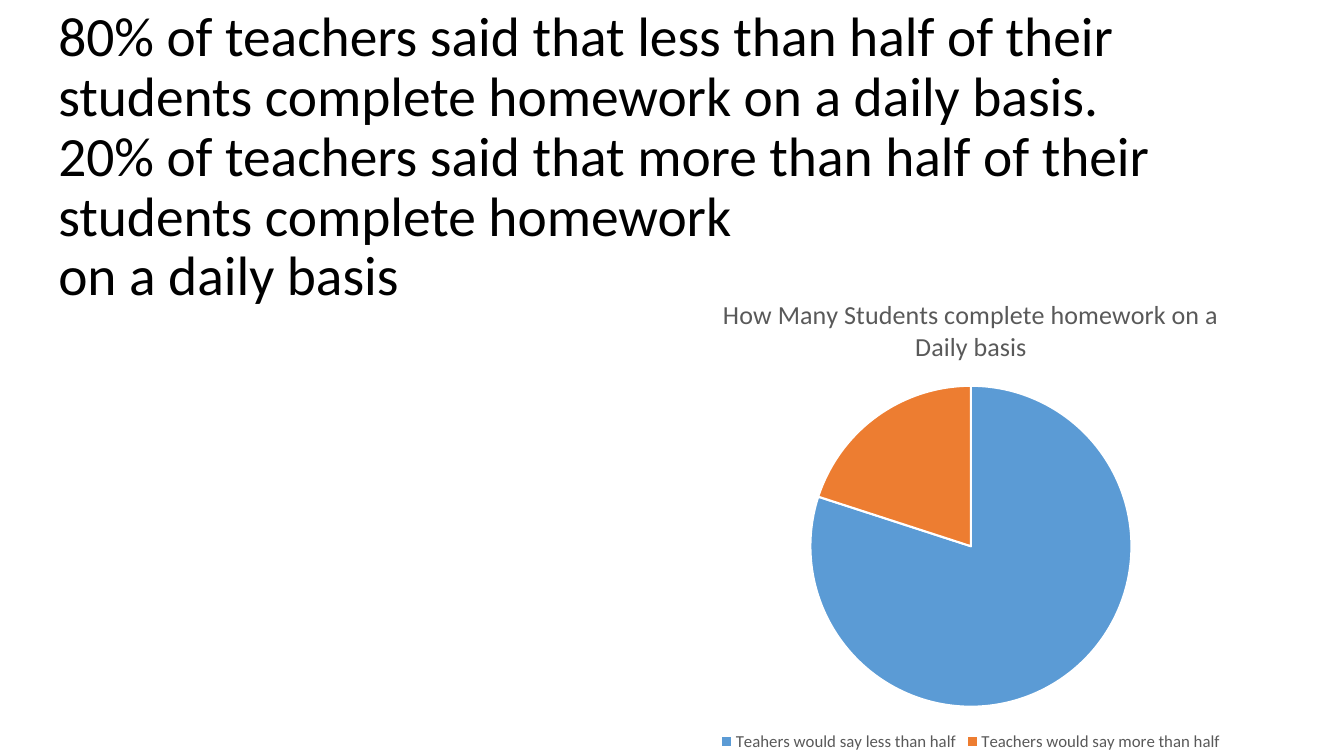
from dataclasses import dataclass

import pptx
import pptx.chart.data
import pptx.dml.color
import pptx.enum.chart
import pptx.enum.text
import pptx.util
from pptx.util import Inches


@dataclass(frozen=True)
class Theme:
    font: str = "Calibri"
    ink: str = "000000"
    muted: str = "595959"
    paper: str = "FFFFFF"
    slices: tuple = ("5B9BD5", "ED7D31")
    heading_size: float = 39.6
    chart_title_size: float = 18.6
    legend_size: float = 12
    chart_size: float = 10
    slice_border: float = 1.5


class HomeworkSlide:
    def __init__(self, slide, theme):
        self.slide = slide
        self.theme = theme

    def color(self, value):
        return pptx.dml.color.RGBColor.from_string(value)

    def style(self, font, size, color):
        font.name = self.theme.font
        font.size = pptx.util.Pt(size)
        font.bold = False
        font.color.rgb = self.color(color)

    def heading(self, text, left, top, width, height):
        box = self.slide.shapes.add_textbox(
            Inches(left), Inches(top), Inches(width), Inches(height))
        frame = box.text_frame
        frame.word_wrap = True
        frame.vertical_anchor = pptx.enum.text.MSO_ANCHOR.MIDDLE
        frame.margin_bottom = Inches(0.65)
        statement = frame.paragraphs[0]
        statement.text = text
        statement.line_spacing = 0.9
        self.style(statement.font, self.theme.heading_size, self.theme.ink)

    def pie(self, title, shares, left, top, width, height):
        survey = pptx.chart.data.CategoryChartData()
        survey.categories = list(shares)
        survey.add_series(title, list(shares.values()))
        chart = self.slide.shapes.add_chart(
            pptx.enum.chart.XL_CHART_TYPE.PIE, Inches(left), Inches(top),
            Inches(width), Inches(height), survey).chart
        self.style(chart.font, self.theme.chart_size, self.theme.ink)

        chart.has_title = True
        chart.chart_title.include_in_layout = False
        caption = chart.chart_title.text_frame.paragraphs[0]
        caption.text = title
        self.style(caption.font, self.theme.chart_title_size, self.theme.muted)

        chart.has_legend = True
        chart.legend.position = pptx.enum.chart.XL_LEGEND_POSITION.BOTTOM
        chart.legend.include_in_layout = False
        self.style(chart.legend.font, self.theme.legend_size, self.theme.muted)

        plot = chart.plots[0]
        plot.vary_by_categories = True
        for index, color in enumerate(self.theme.slices):
            share = plot.series[0].points[index].format
            share.fill.solid()
            share.fill.fore_color.rgb = self.color(color)
            share.line.color.rgb = self.color(self.theme.paper)
            share.line.width = pptx.util.Pt(self.theme.slice_border)


def main():
    deck = pptx.Presentation()
    deck.slide_width = Inches(13.33)
    deck.slide_height = Inches(7.5)
    homework = HomeworkSlide(
        deck.slides.add_slide(deck.slide_layouts[6]), Theme())
    homework.heading(
        "80% of teachers said that less than half of their students "
        "complete homework on a daily basis.\v"
        "20% of teachers said that more than half of their students "
        "complete homework\von a daily basis",
        0.48, 0.42, 12.4, 2.9)
    homework.pie(
        "How Many Students complete homework on a Daily basis",
        {"Teahers would say less than half": 80,
         "Teachers would say more than half": 20},
        6.38, 2.74, 6.5, 4.76)
    deck.save("out.pptx")


if __name__ == "__main__":
    main()
